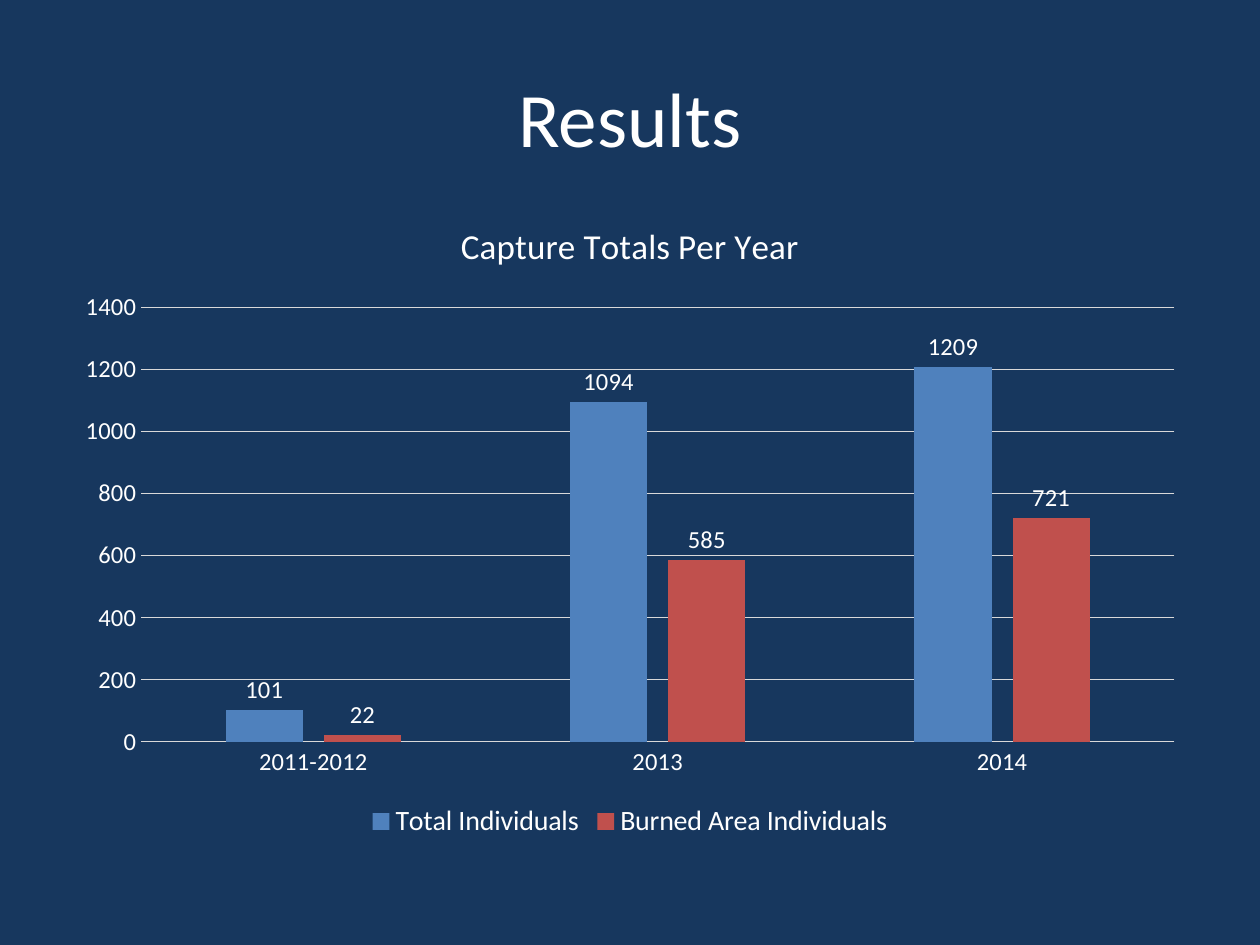
from pptx import Presentation
from pptx.chart.data import CategoryChartData
from pptx.dml.color import RGBColor
from pptx.enum import chart as ch, text
from pptx.util import Pt

WHITE, GREY, NAVY = "FFFFFF", "D9D9D9", "17375E"


def rgb(color):
    return RGBColor.from_string(color)


def style(font, size):
    font.name, font.size, font.bold = "Calibri", Pt(size), False
    font.color.rgb = rgb(WHITE)


prs = Presentation()
prs.slide_width, prs.slide_height = Pt(720), Pt(540)
slide = prs.slides.add_slide(prs.slide_layouts[5])
slide.background.fill.solid()
slide.background.fill.fore_color.rgb = rgb(NAVY)

# Heading
heading = slide.shapes.title
heading.left, heading.top, heading.width, heading.height = Pt(36), Pt(21.6), Pt(648), Pt(90)
heading.text_frame.text = "Results"
heading.text_frame.vertical_anchor = text.MSO_ANCHOR.MIDDLE
heading.text_frame.paragraphs[0].alignment = text.PP_ALIGN.CENTER
style(heading.text_frame.paragraphs[0].font, 44)

# Captures per year
captures = CategoryChartData()
captures.categories = ["2011-2012", "2013", "2014"]
captures.add_series("Total Individuals", [101, 1094, 1209])
captures.add_series("Burned Area Individuals", [22, 585, 721])
chart = slide.shapes.add_chart(ch.XL_CHART_TYPE.COLUMN_CLUSTERED,
                               Pt(36), Pt(111.6), Pt(648), Pt(370.8), captures).chart
style(chart.font, 10)
chart.has_title = True
chart.chart_title.include_in_layout = False
chart_heading = chart.chart_title.text_frame
chart_heading.text = "Capture Totals Per Year"
style(chart_heading.paragraphs[0].font, 20)

# Columns and value labels
plot = chart.plots[0]
plot.gap_width, plot.overlap = 219, -27
plot.vary_by_categories = False
for series, color in zip(plot.series, ["4F81BD", "C0504D"]):
    series.format.fill.solid()
    series.format.fill.fore_color.rgb = rgb(color)
    labels = series.data_labels
    labels.show_value = True
    labels.position = ch.XL_LABEL_POSITION.OUTSIDE_END
    style(labels.font, 14)

# Axes
years, counts = chart.category_axis, chart.value_axis
for axis in (years, counts):
    axis.major_tick_mark = axis.minor_tick_mark = ch.XL_TICK_MARK.NONE
    style(axis.tick_labels.font, 14)
counts.minimum_scale, counts.maximum_scale, counts.major_unit = 0, 1400, 200
counts.has_major_gridlines = True
counts.format.line.fill.background()
for line in (years.format.line, counts.major_gridlines.format.line):
    line.color.rgb = rgb(GREY)
    line.width = Pt(0.75)

# Legend
chart.has_legend = True
chart.legend.position = ch.XL_LEGEND_POSITION.BOTTOM
chart.legend.include_in_layout = False
style(chart.legend.font, 16)

prs.save("out.pptx")
